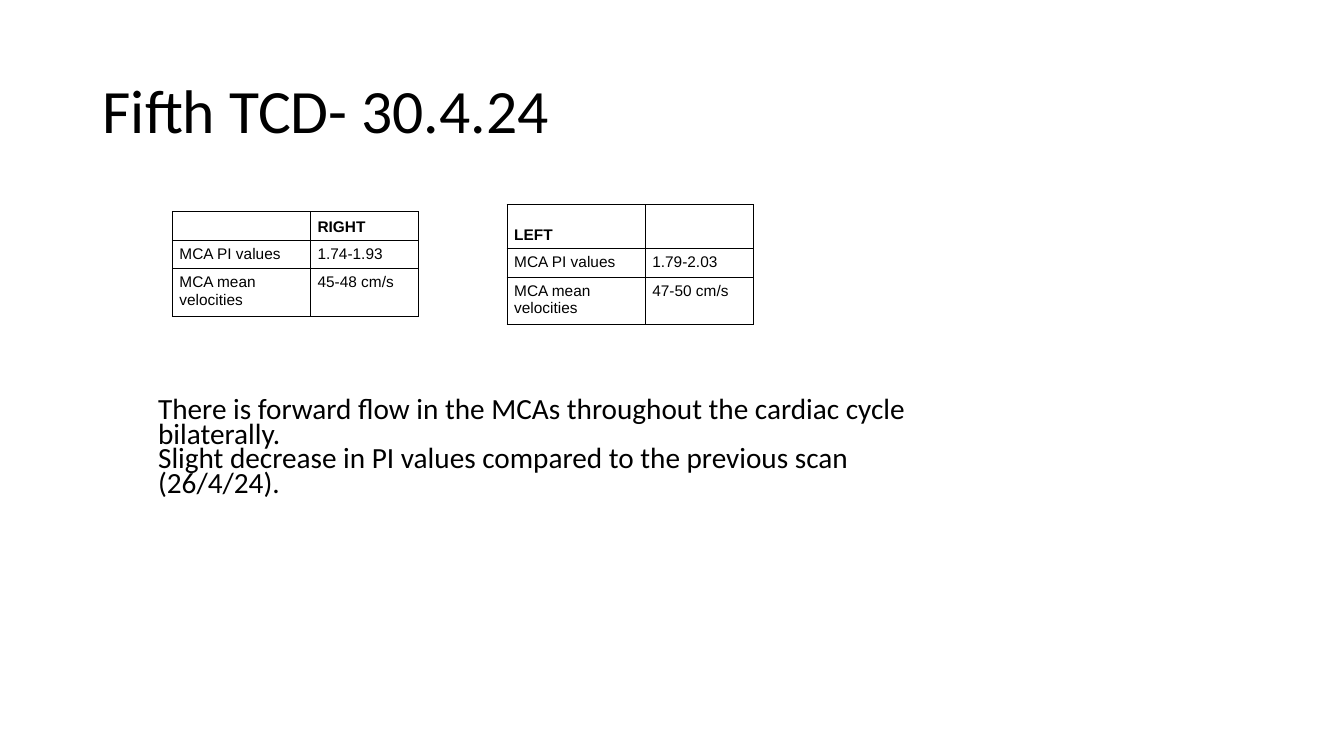
"""Build the fifth TCD scan slide with its right and left MCA tables."""
from dataclasses import dataclass

from lxml import etree
from pptx import Presentation
from pptx.dml.color import RGBColor
from pptx.enum.text import MSO_ANCHOR
from pptx.oxml.ns import qn
from pptx.slide import Slide
from pptx.table import _Cell
from pptx.text.text import _Paragraph
from pptx.util import Inches, Pt

TOP = MSO_ANCHOR.TOP
MIDDLE = MSO_ANCHOR.MIDDLE
BOTTOM = MSO_ANCHOR.BOTTOM
BLACK = "000000"
WHITE = "FFFFFF"
TABLE_SIZE = 11
BORDER_WIDTH = 0.75
COLUMN_WIDTHS = (1.37, 1.07)


@dataclass(frozen=True)
class TextBlock:
    left: float
    top: float
    width: float
    height: float
    lines: tuple[str, ...]
    size: float
    line_spacing: float
    anchor: MSO_ANCHOR


@dataclass(frozen=True)
class ScanTable:
    left: float
    top: float
    row_heights: tuple[float, ...]
    header: tuple[str, str]
    pulsatility: str
    velocity: str


TEXT_BLOCKS = (
    TextBlock(0.92, 0.4, 11.5, 1.45, ("Fifth TCD- 30.4.24",), 44, 0.9, MIDDLE),
    TextBlock(1.47, 3.92, 8, 1.18, (
        "There is forward flow in the MCAs throughout the cardiac cycle bilaterally.",
        "Slight decrease in PI values compared to the previous scan (26/4/24).",
    ), 20.9, 0.7, TOP),
)
SCAN_TABLES = (
    ScanTable(1.71, 2.1, (0.27, 0.27, 0.44), ("", "RIGHT"), "1.74-1.93", "45-48 cm/s"),
    ScanTable(5.03, 2.03, (0.44, 0.27, 0.44), ("LEFT", ""), "1.79-2.03", "47-50 cm/s"),
)


def color(value: str) -> RGBColor:
    return RGBColor.from_string(value)


def format_spans(paragraph: _Paragraph, font: str, size: float, bold: bool = False) -> None:
    for span in paragraph.runs:
        span.font.name = font
        span.font.size = Pt(size)
        span.font.bold = bold
        span.font.color.rgb = color(BLACK)


def add_text(page: Slide, block: TextBlock) -> None:
    box = page.shapes.add_textbox(
        Inches(block.left), Inches(block.top), Inches(block.width), Inches(block.height))
    frame = box.text_frame
    frame.word_wrap = True
    frame.vertical_anchor = block.anchor
    frame.text = "\n".join(block.lines)
    for paragraph in frame.paragraphs:
        paragraph.line_spacing = block.line_spacing
        format_spans(paragraph, "Calibri", block.size)


def add_borders(cell: _Cell) -> None:
    properties = cell._tc.get_or_add_tcPr()
    for side in ("lnL", "lnR", "lnT", "lnB"):
        line = etree.SubElement(properties, qn(f"a:{side}"), w=str(Pt(BORDER_WIDTH)))
        fill = etree.SubElement(line, qn("a:solidFill"))
        etree.SubElement(fill, qn("a:srgbClr"), val=BLACK)


def fill_cell(cell: _Cell, text: str, header: bool) -> None:
    add_borders(cell)
    cell.fill.solid()
    cell.fill.fore_color.rgb = color(WHITE)
    cell.margin_left = cell.margin_right = Inches(0.07)
    cell.margin_top = cell.margin_bottom = Inches(0.05)
    cell.vertical_anchor = BOTTOM if header else TOP
    cell.text_frame.text = text
    paragraph = cell.text_frame.paragraphs[0]
    format_spans(paragraph, "Arial", TABLE_SIZE, header)
    if not text:
        etree.SubElement(paragraph._p, qn("a:endParaRPr"), sz=str(TABLE_SIZE * 100))


def add_scan_table(page: Slide, scan: ScanTable) -> None:
    rows = (
        scan.header,
        ("MCA PI values", scan.pulsatility),
        ("MCA mean velocities", scan.velocity),
    )
    table = page.shapes.add_table(
        len(rows), len(COLUMN_WIDTHS), Inches(scan.left), Inches(scan.top),
        Inches(sum(COLUMN_WIDTHS)), Inches(sum(scan.row_heights))).table
    table.first_row = True
    table.horz_banding = False
    for column, width in zip(table.columns, COLUMN_WIDTHS):
        column.width = Inches(width)
    for row_index, (values, height) in enumerate(zip(rows, scan.row_heights)):
        table.rows[row_index].height = Inches(height)
        for column_index, text in enumerate(values):
            fill_cell(table.cell(row_index, column_index), text, row_index == 0)


def main() -> None:
    deck = Presentation()
    deck.slide_width = Inches(13.33)
    deck.slide_height = Inches(7.5)
    page = deck.slides.add_slide(deck.slide_layouts[6])
    for block in TEXT_BLOCKS:
        add_text(page, block)
    for scan in SCAN_TABLES:
        add_scan_table(page, scan)
    deck.save("out.pptx")


if __name__ == "__main__":
    main()
